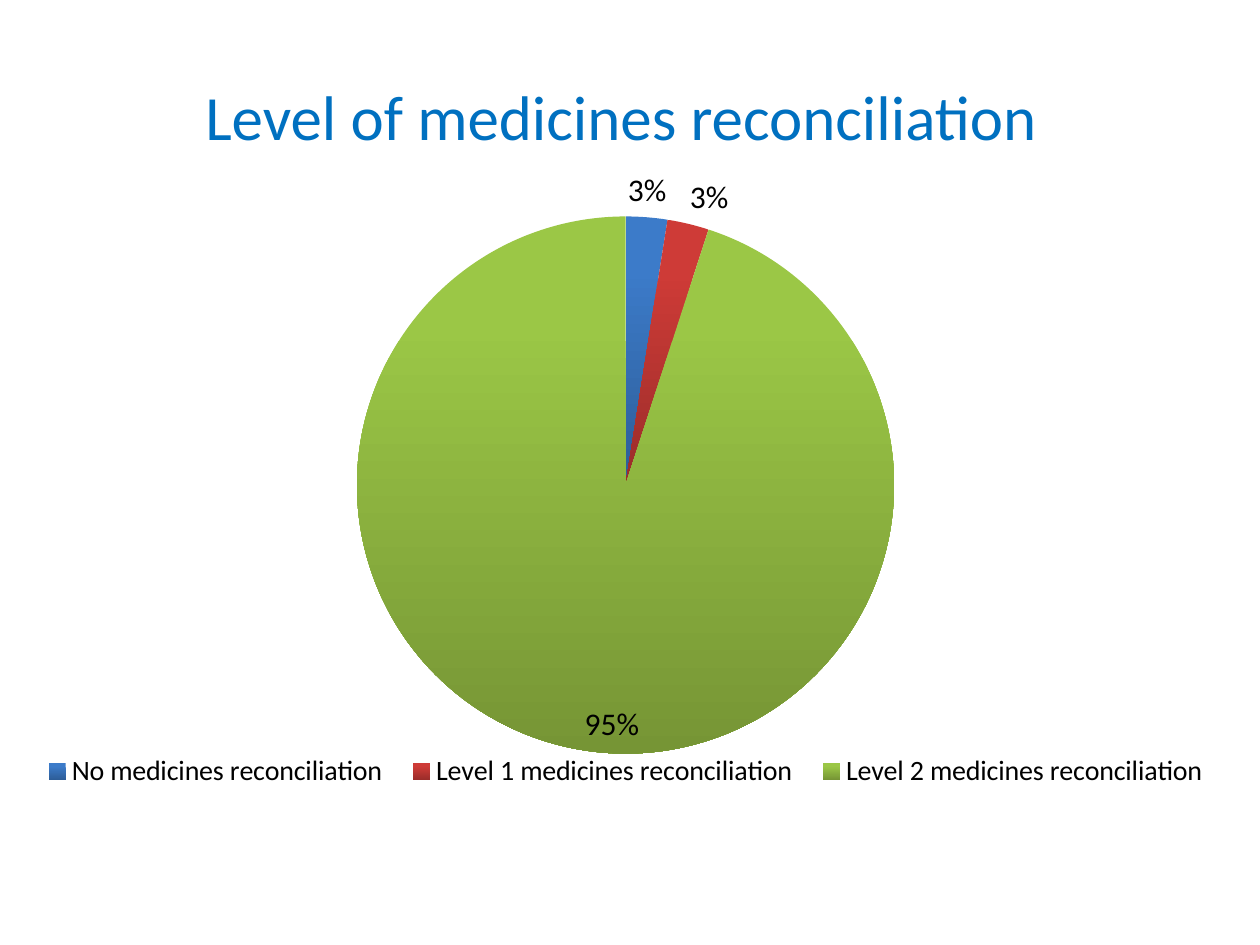
import pptx
import pptx.chart.data
import pptx.dml.color
import pptx.enum.chart
import pptx.enum.text
import pptx.oxml
import pptx.oxml.ns
import pptx.util

FONT = "Calibri"
COLORS = {
    "title": "0070C0",
    "text": "000000",
}
LABEL = pptx.enum.chart.XL_LABEL_POSITION
# category, value, top colour, bottom colour, label position
LEVELS = [
    ("No medicines reconciliation", 2.5, "3C7BC9", "2D5D98", LABEL.OUTSIDE_END),
    ("Level 1 medicines reconciliation", 2.5, "CE3B37", "9B2D2A", LABEL.OUTSIDE_END),
    ("Level 2 medicines reconciliation", 95, "9BC746", "769535", LABEL.INSIDE_END),
]


def rgb(value):
    return pptx.dml.color.RGBColor.from_string(value)


def set_font(font, size, color):
    for name, value in {"name": FONT, "size": pptx.util.Pt(size), "bold": False}.items():
        setattr(font, name, value)
    font.color.rgb = rgb(color)


def set_layout(parent, index, shares, inner=False):
    """Place a chart part by its x, y, width and height as shares of the chart."""
    for old in parent.findall(pptx.oxml.ns.qn("c:layout")):
        parent.remove(old)
    target = '<c:layoutTarget val="inner"/>' if inner else ""
    modes = '<c:xMode val="edge"/><c:yMode val="edge"/>'
    sizes = "".join(f'<c:{tag} val="{share}"/>' for tag, share in zip("xywh", shares))
    parent.insert(index, pptx.oxml.parse_xml(
        f'<c:layout {pptx.oxml.ns.nsdecls("c")}><c:manualLayout>'
        f"{target}{modes}{sizes}</c:manualLayout></c:layout>"))


def add_title(slide, box):
    frame = slide.shapes.add_textbox(*box).text_frame
    frame.word_wrap = True
    frame.vertical_anchor = pptx.enum.text.MSO_ANCHOR.MIDDLE
    heading = frame.paragraphs[0]
    heading.text = "Level of medicines reconciliation"
    heading.alignment = pptx.enum.text.PP_ALIGN.CENTER
    set_font(heading.font, 36, COLORS["title"])


def shade_slice(fill, top, bottom):
    fill.gradient()
    fill.gradient_angle = 270
    for stop, color, position in zip(fill.gradient_stops, (top, bottom), (0.2, 1)):
        stop.color.rgb = rgb(color)
        stop.position = position


def add_level_pie(slide, box):
    data = pptx.chart.data.CategoryChartData()
    data.categories = [level[0] for level in LEVELS]
    data.add_series("Series 1", [level[1] for level in LEVELS])
    chart = slide.shapes.add_chart(
        pptx.enum.chart.XL_CHART_TYPE.PIE, *box, data).chart
    chart.has_title = False
    set_font(chart.font, 18, COLORS["text"])

    plot = chart.plots[0]
    plot.vary_by_categories = True
    series = plot.series[0]
    label_format = {
        "show_percentage": True, "show_value": False, "number_format": "0%",
        "number_format_is_linked": False, "position": LABEL.OUTSIDE_END,
    }
    labels = series.data_labels
    for name, value in label_format.items():
        setattr(labels, name, value)
    set_font(labels.font, 18, COLORS["text"])
    for index, (_, _, top, bottom, position) in enumerate(LEVELS):
        point = series.points[index]
        shade_slice(point.format.fill, top, bottom)
        if position != labels.position:
            point.data_label.position = position
            single = labels._element.find(pptx.oxml.ns.qn("c:dLbl"))
            for tag, shown in (("showVal", 0), ("showPercent", 1)):
                single.find(pptx.oxml.ns.qn(f"c:{tag}")).set("val", str(shown))

    chart.has_legend = True
    legend = chart.legend
    legend.position = pptx.enum.chart.XL_LEGEND_POSITION.BOTTOM
    legend.include_in_layout = False
    set_font(legend.font, 16, COLORS["text"])
    set_layout(legend._element, 1, (0.01, 0.88, 0.98, 0.07))
    set_layout(plot._element.getparent(), 0, (0.28, 0.09, 0.44, 0.8), inner=True)


def main():
    deck = pptx.Presentation()
    deck.slide_width = pptx.util.Inches(10)
    deck.slide_height = pptx.util.Inches(7.5)
    slide = deck.slides.add_slide(deck.slide_layouts[6])

    def area(left, top, width, height):
        """Turn shares of the slide into a box."""
        return (int(left * deck.slide_width), int(top * deck.slide_height),
                int(width * deck.slide_width), int(height * deck.slide_height))

    add_title(slide, area(0.043, 0.039, 0.9, 0.167))
    add_level_pie(slide, area(0.012, 0.164, 0.969, 0.713))
    deck.save("out.pptx")


if __name__ == "__main__":
    main()
